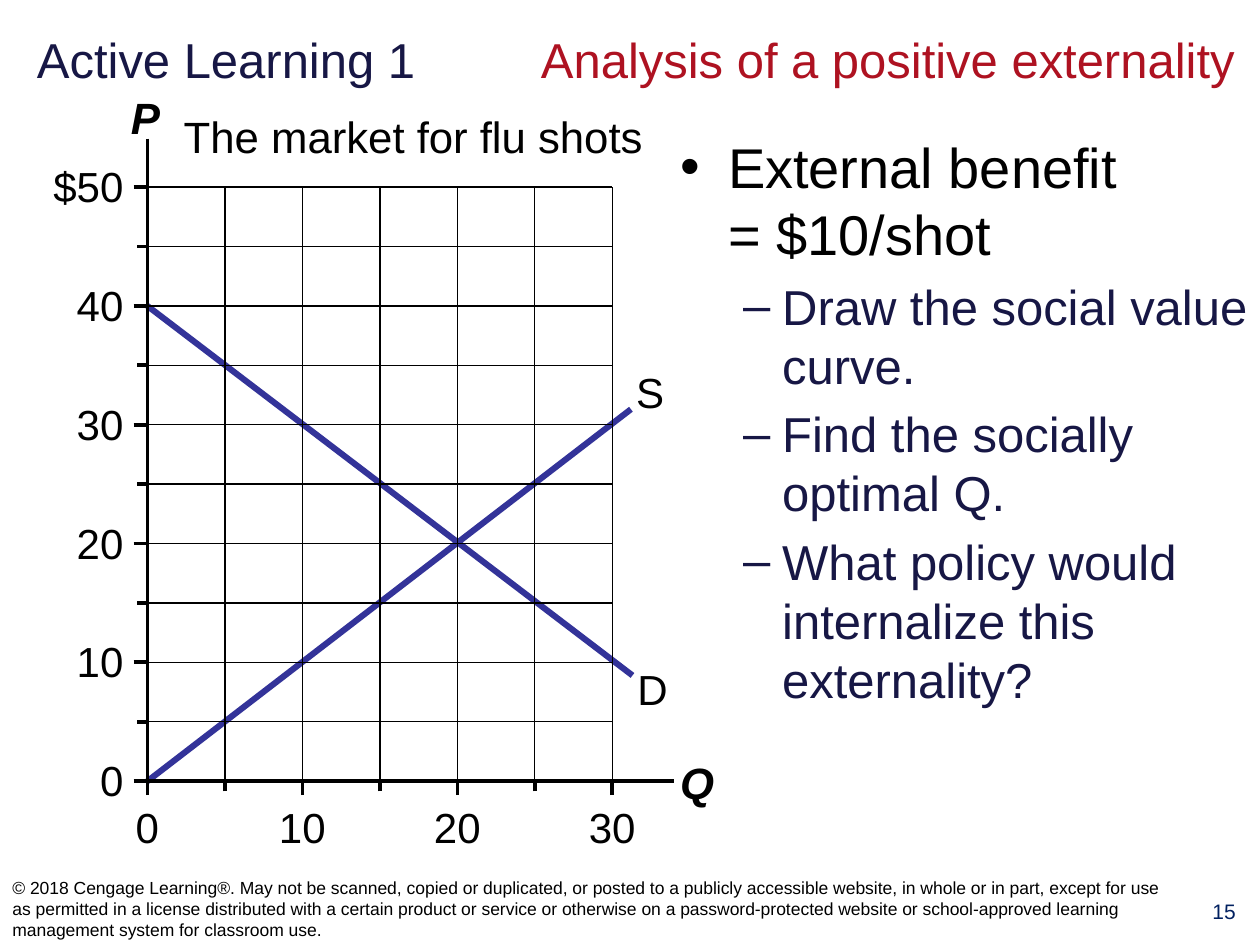
from dataclasses import dataclass

from lxml.etree import SubElement
from pptx import Presentation
from pptx.dml.color import RGBColor as Color
from pptx.enum.shapes import MSO_CONNECTOR as Connector
from pptx.enum.text import MSO_ANCHOR as Anchor, PP_ALIGN as Align
from pptx.oxml.ns import qn
from pptx.util import Inches, Pt


@dataclass(frozen=True)
class Theme:
    font: str = "Arial"
    black: str = "000000"
    navy: str = "171745"
    red: str = "AE1221"
    number_blue: str = "002060"
    curve_blue: str = "333399"
    lead: int = 32
    heading: int = 28
    caption: int = 25
    label: int = 24
    number: int = 12
    legal: int = 10
    hairline: float = 0.75
    axis: float = 2.13
    curve: float = 3.5


class SlideBuilder:
    """Places elements on a grid of 100 columns by 75 rows."""

    COLUMNS, ROWS = 100, 75

    def __init__(self, deck, theme):
        self.theme = theme
        self.slide = deck.slides.add_slide(deck.slide_layouts[6])
        self.column = deck.slide_width / self.COLUMNS
        self.row = deck.slide_height / self.ROWS

    def place(self, column, row):
        return round(column * self.column), round(row * self.row)

    def style(self, span, size, color, emphasis=False):
        font = span.font
        font.name, font.size = self.theme.font, Pt(size)
        font.bold = font.italic = emphasis
        font.color.rgb = Color.from_string(color)

    def frame(self, area, anchor=Anchor.TOP, wrap=True, inset=True):
        left, top, width, height = area
        box = self.slide.shapes.add_textbox(*self.place(left, top), *self.place(width, height))
        frame = box.text_frame
        frame.word_wrap, frame.vertical_anchor = wrap, anchor
        if not inset:
            frame.margin_left = frame.margin_right = 0
            frame.margin_top = frame.margin_bottom = 0
        return frame

    def text(self, words, area, size, color=None, align=Align.LEFT, emphasis=False, **layout):
        para = self.frame(area, **layout).paragraphs[0]
        para.text, para.alignment = words, align
        for span in para.runs:
            self.style(span, size, color or self.theme.black, emphasis)
        return para

    def bullets(self, items, area):
        """Each item is (words, level); level 0 leads, level 1 is indented."""
        looks = (
            ("•", 0.38, 0.38, self.theme.lead, self.theme.black),
            ("–", 0.81, 0.31, self.theme.heading, self.theme.navy),
        )
        frame = self.frame(area)
        for index, (words, level) in enumerate(items):
            mark, margin, hanging, size, color = looks[level]
            para = frame.add_paragraph() if index else frame.paragraphs[0]
            para.text, para.level = words, level
            if index:
                para.space_before = Pt(size * 0.2)
            properties = para._p.get_or_add_pPr()
            properties.set("marL", str(Inches(margin)))
            properties.set("indent", str(-Inches(hanging)))
            SubElement(properties, qn("a:buFont")).set("typeface", self.theme.font)
            SubElement(properties, qn("a:buChar")).set("char", mark)
            for span in para.runs:
                self.style(span, size, color)

    def line(self, start, end, width, color=None):
        connector = self.slide.shapes.add_connector(
            Connector.STRAIGHT, *self.place(*start), *self.place(*end))
        connector.line.width = Pt(width)
        connector.line.color.rgb = Color.from_string(color or self.theme.black)
        SubElement(connector._element.spPr, qn("a:effectLst"))


class MarketGraph:
    """Supply and demand graph, plotted by quantity and price."""

    LEFT, BASE = 11.7, 62
    PER_UNIT, PER_DOLLAR = 1.23, 0.943
    MAX_QUANTITY, MAX_PRICE, STEP = 30, 50, 5

    def __init__(self, builder):
        self.builder, self.theme = builder, builder.theme

    def point(self, quantity, price):
        return self.LEFT + quantity * self.PER_UNIT, self.BASE - price * self.PER_DOLLAR

    def steps(self, maximum, first=0):
        return range(first, maximum + 1, self.STEP)

    def curve(self, name, start, end, label_area):
        self.builder.line(self.point(*start), self.point(*end),
                          self.theme.curve, self.theme.curve_blue)
        self.builder.text(name, label_area, self.theme.label)

    def grid(self):
        for price in self.steps(self.MAX_PRICE, self.STEP):
            self.builder.line(self.point(0, price), self.point(self.MAX_QUANTITY, price),
                              self.theme.hairline)
        for quantity in self.steps(self.MAX_QUANTITY, self.STEP):
            self.builder.line(self.point(quantity, self.MAX_PRICE), self.point(quantity, 0),
                              self.theme.hairline)

    def tick(self, value):
        """Length of the tick: labelled tens get a longer one."""
        return 0.8 if value % 10 else 1.1

    def axes(self):
        builder, theme = self.builder, self.theme
        origin = self.point(0, 0)
        builder.line((self.LEFT, 11), origin, theme.axis)
        builder.line(origin, (53.5, self.BASE), theme.axis)
        for price in self.steps(self.MAX_PRICE):
            x, y = self.point(0, price)
            builder.line((x - self.tick(price), y), (x, y), theme.axis)
            if price % 10 == 0:
                words = f"${price}" if price == self.MAX_PRICE else str(price)
                builder.text(words, (3.8, y - 2.1, 6, 4), theme.label,
                             align=Align.RIGHT, wrap=True, inset=False)
        for quantity in self.steps(self.MAX_QUANTITY):
            x, y = self.point(quantity, 0)
            builder.line((x, y + self.tick(quantity)), (x, y), theme.axis)
            if quantity % 10 == 0:
                builder.text(str(quantity), (x - 2, 63.6, 4, 4), theme.label,
                             align=Align.CENTER, inset=False)
        for name, left, top in (("P", 9.4, 6.7), ("Q", 53, 59.5)):
            builder.text(name, (left, top, 5.4, 5.2), theme.caption,
                         emphasis=True, wrap=False)


def main():
    deck = Presentation()
    deck.slide_width, deck.slide_height = Inches(10), Inches(7.5)
    theme = Theme()
    builder = SlideBuilder(deck, theme)

    title = builder.text("Active Learning 1 \t\t", (1.7, 1.1, 97.5, 7.2), theme.heading,
                         theme.navy, Align.CENTER, anchor=Anchor.MIDDLE)
    topic = title.add_run()
    topic.text = "Analysis of a positive externality"
    builder.style(topic, theme.heading, theme.red)

    builder.bullets([
        ("External benefit\v= $10/shot", 0),
        ("Draw the social value curve.", 1),
        ("Find the socially optimal Q.", 1),
        ("What policy would internalize this externality?", 1),
    ], (53, 10, 47, 60.5))
    builder.text("15", (94.3, 70.8, 5.7, 4.1), theme.number, theme.number_blue, Align.CENTER)
    builder.text(
        "© 2018 Cengage Learning®. May not be scanned, copied or duplicated, or posted to a "
        "publicly accessible website, in whole or in part, except for use as permitted in a "
        "license distributed with a certain product or service or otherwise on a "
        "password-protected website or school-approved learning management system for "
        "classroom use.",
        (0, 69.2, 94.1, 5.8), theme.legal, anchor=Anchor.MIDDLE)

    builder.text("The market for flu shots", (13.6, 8.2, 38.5, 5.2), theme.caption, wrap=False)
    graph = MarketGraph(builder)
    graph.curve("D", (0, 40), (31.3, 8.9), (49.6, 52.2, 4.5, 5))
    graph.curve("S", (0, 0), (31.2, 31.3), (49.5, 28.6, 4.3, 5))
    graph.grid()
    graph.axes()

    deck.save("out.pptx")


if __name__ == "__main__":
    main()
